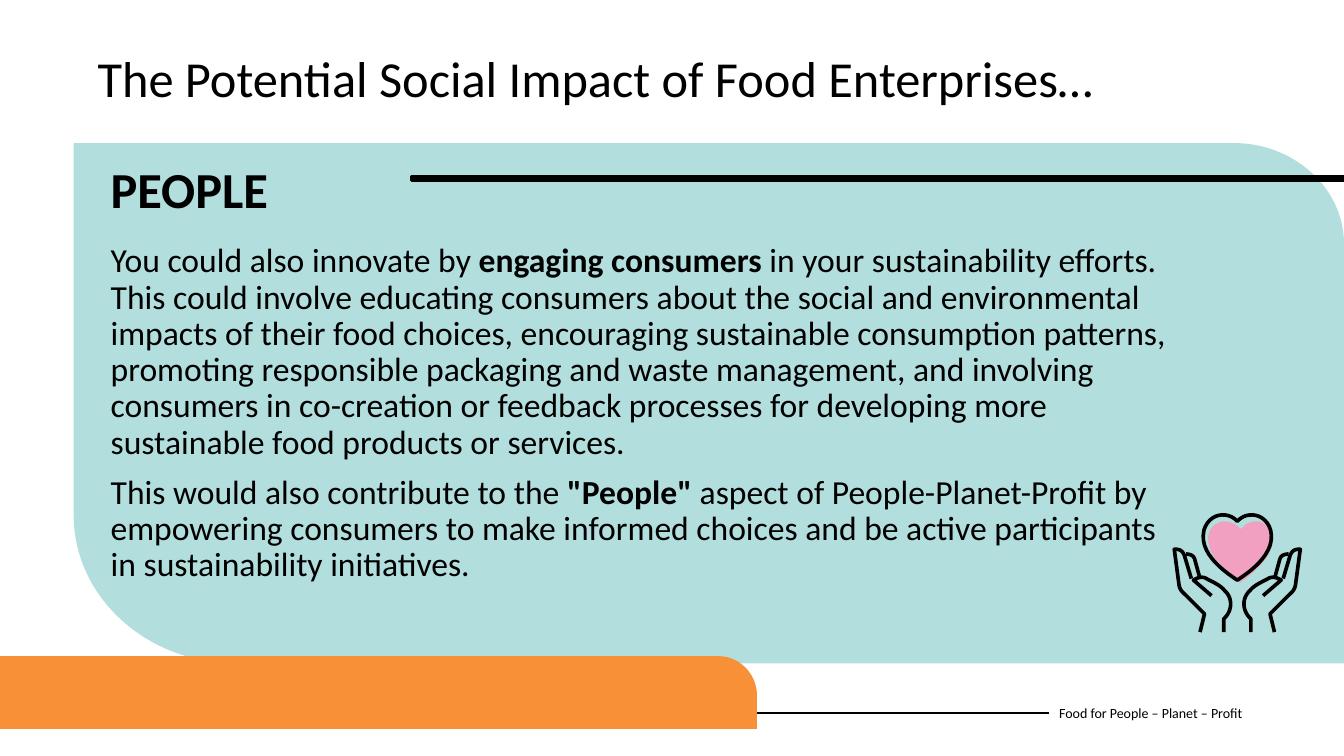
"""Build the People slide on the social impact of food enterprises."""
from lxml.etree import SubElement
from pptx import Presentation
from pptx.dml.color import RGBColor
from pptx.enum.shapes import MSO_CONNECTOR, MSO_SHAPE
from pptx.enum.text import MSO_ANCHOR, MSO_AUTO_SIZE
from pptx.oxml.ns import qn
from pptx.util import Pt

HUES = {"ink": "000000", "teal": "B2DEDD", "orange": "F79037", "pink": "F1A0C2"}
FONT = "Calibri"
TITLE = [[("The Potential Social Impact of Food Enterprises…", False)]]
HEAD = [[("PEOPLE", True)]]
FOOT = [[("Food for People – Planet – Profit", False)]]
BODY = [
    [
        ("You could also innovate by ", False),
        ("engaging consumers ", True),
        ("in your sustainability efforts. This could involve educating consumers "
         "about the social and environmental impacts of their food choices, "
         "encouraging sustainable consumption patterns, promoting responsible "
         "packaging and waste management, and involving consumers in co-creation "
         "or feedback processes for developing more sustainable food products "
         "or services.", False),
    ],
    [
        ("This would also contribute to the ", False),
        ('"People" ', True),
        ("aspect of People-Planet-Profit by empowering consumers to make informed "
         "choices and be active participants in sustainability initiatives.", False),
    ],
]

PANEL = [
    (52.6, 102.2), (881.3, 102.2), (924.5, 102.2, 960, 134.6, 960, 174.2),
    (960, 473.8), (168.5, 473.8), (104.4, 473.8, 52.6, 426.2, 52.6, 367.9),
]
BAND = [
    (0, 520.6), (0, 468.7), (513.4, 468.7),
    (528.5, 468.7, 540.7, 481.7, 540.7, 496.8), (540.7, 520.6),
]
ICON = (883.8, 366.5)
FILLING = [
    (-20.9, 18.7), (-20.9, 13, -18, 8.6, -12.6, 6.5),
    (-8.3, 5, -2.5, 6.5, 1.1, 10.1), (1.8, 11.5, 2.5, 11.5, 4, 10.1),
    (5.4, 8.6, 6.8, 7.2, 9.7, 6.5), (16.2, 4.3, 23.4, 8.6, 24.8, 15.1),
    (25.6, 18.7, 25.6, 22.3, 24.2, 25.2), (22, 30.2, 19.1, 34.6, 15.5, 38.2),
    (11.2, 42.5, 7.6, 46.1, 1.8, 49.7), (-4, 44.6, -9.7, 39.6, -14.8, 33.8),
    (-17, 31, -19.1, 27.4, -20, 23.8),
]
HEART = [
    (0, 5.8), (7.6, -2.2, 20.5, 0.7, 23.8, 12.2), (27.4, 27.4, 12.6, 39.6, 0, 47.9),
]
HAND = [
    [(9.7, 85), (9.7, 75.6), (3.2, 69.8, 3.2, 60.5, 9, 55.4),
     (12.6, 50.9, 18.4, 49, 22, 46.8), (24.8, 45, 28.4, 46, 31.3, 47.9), (18.4, 59)],
    [(27, 45.4), (30.2, 33.8), (30.8, 30.5, 33, 29.5, 36.7, 29.2)],
    [(32.8, 46.8), (37.8, 30.2), (39.2, 26.6, 41.5, 25.6, 45, 25.9), (41.8, 49.7),
     (41.4, 54.7, 39.5, 56, 37.1, 58.3), (23.4, 72), (26.6, 85)],
]


def trace(steps, parts=12):
    """Turn corners and cubic curves into a list of points."""
    dots = [steps[0]]
    for step in steps[1:]:
        if len(step) == 2:
            dots.append(step)
            continue
        nodes = [dots[-1], step[:2], step[2:4], step[4:]]
        for n in range(1, parts + 1):
            t = n / parts
            mix = ((1 - t) ** 3, 3 * t * (1 - t) ** 2, 3 * t * t * (1 - t), t ** 3)
            dots.append(tuple(sum(m * p[k] for m, p in zip(mix, nodes)) for k in (0, 1)))
    return dots


def flip(dots):
    """Mirror points across the icon's upright axis."""
    return [(-x, y) for x, y in dots]


def paint(shape, fill=None, line=None, width=1):
    """Set fill and line, and drop the shadow."""
    shape.shadow.inherit = False
    if fill:
        shape.fill.solid()
        shape.fill.fore_color.rgb = RGBColor.from_string(HUES[fill])
    else:
        shape.fill.background()
    if line:
        shape.line.color.rgb = RGBColor.from_string(HUES[line])
        shape.line.width = Pt(width)
    else:
        shape.line.fill.background()


def draw(slide, dots, fill=None, line=None, close=True, base=(0, 0)):
    """Draw an outline through the given points."""
    pens = [(Pt(base[0] + x), Pt(base[1] + y)) for x, y in dots]
    form = slide.shapes.build_freeform(*pens[0], scale=1.0)
    form.add_line_segments(pens[1:], close=close)
    paint(form.convert_to_shape(), fill, line, 2.6)


def write(slide, area, paras, size, anchor=MSO_ANCHOR.TOP, tight=False):
    """Add a text box made of paragraphs of plain and bold runs."""
    box = slide.shapes.add_textbox(*map(Pt, area))
    frame = box.text_frame
    frame.word_wrap = True
    frame.auto_size = MSO_AUTO_SIZE.NONE
    frame.vertical_anchor = anchor
    for n, runs in enumerate(paras):
        para = frame.add_paragraph() if n else frame.paragraphs[0]
        para.font.name = FONT
        para.font.size = Pt(size)
        para.font.color.rgb = RGBColor.from_string(HUES["ink"])
        if tight:
            para.line_spacing = 0.9
            para.space_before = Pt(10)
        for text, bold in runs:
            run = para.add_run()
            run.text = text
            run.font.bold = bold
    return box


def main():
    """Compose and save the slide."""
    deck = Presentation()
    deck.slide_width, deck.slide_height = Pt(960), Pt(540)
    slide = deck.slides.add_slide(deck.slide_layouts[6])

    foot = write(slide, (749.5, 494.6, 196.6, 28.8), FOOT, 10, MSO_ANCHOR.MIDDLE)
    rule = slide.shapes.add_connector(
        MSO_CONNECTOR.STRAIGHT, Pt(0), Pt(509), Pt(749.5), Pt(509))
    rule.end_connect(foot, 1)
    rule.line.color.rgb = RGBColor.from_string(HUES["ink"])
    rule.line.width = Pt(1.5)
    SubElement(rule._element.spPr, qn("a:effectLst"))

    draw(slide, trace(PANEL, 32), "teal")
    draw(slide, trace(BAND, 32), "orange")
    bar = slide.shapes.add_shape(
        MSO_SHAPE.RECTANGLE, Pt(293.8), Pt(126), Pt(666.2), Pt(2.9))
    paint(bar, "ink", "ink", 1.93)

    write(slide, (72, 170.6, 776.9, 270.7), BODY, 24, tight=True)
    write(slide, (62.6, 35.3, 834.5, 63.4), TITLE, 36, tight=True)

    draw(slide, trace(FILLING), "pink", base=ICON)
    for steps in HAND:
        dots = trace(steps)
        for side in (dots, flip(dots)):
            draw(slide, side, line="ink", close=False, base=ICON)
    half = trace(HEART)
    draw(slide, half + flip(half)[-2:0:-1], line="ink", base=ICON)
    write(slide, (72, 109.4, 192.2, 51.1), HEAD, 36)
    deck.save("out.pptx")


if __name__ == "__main__":
    main()
